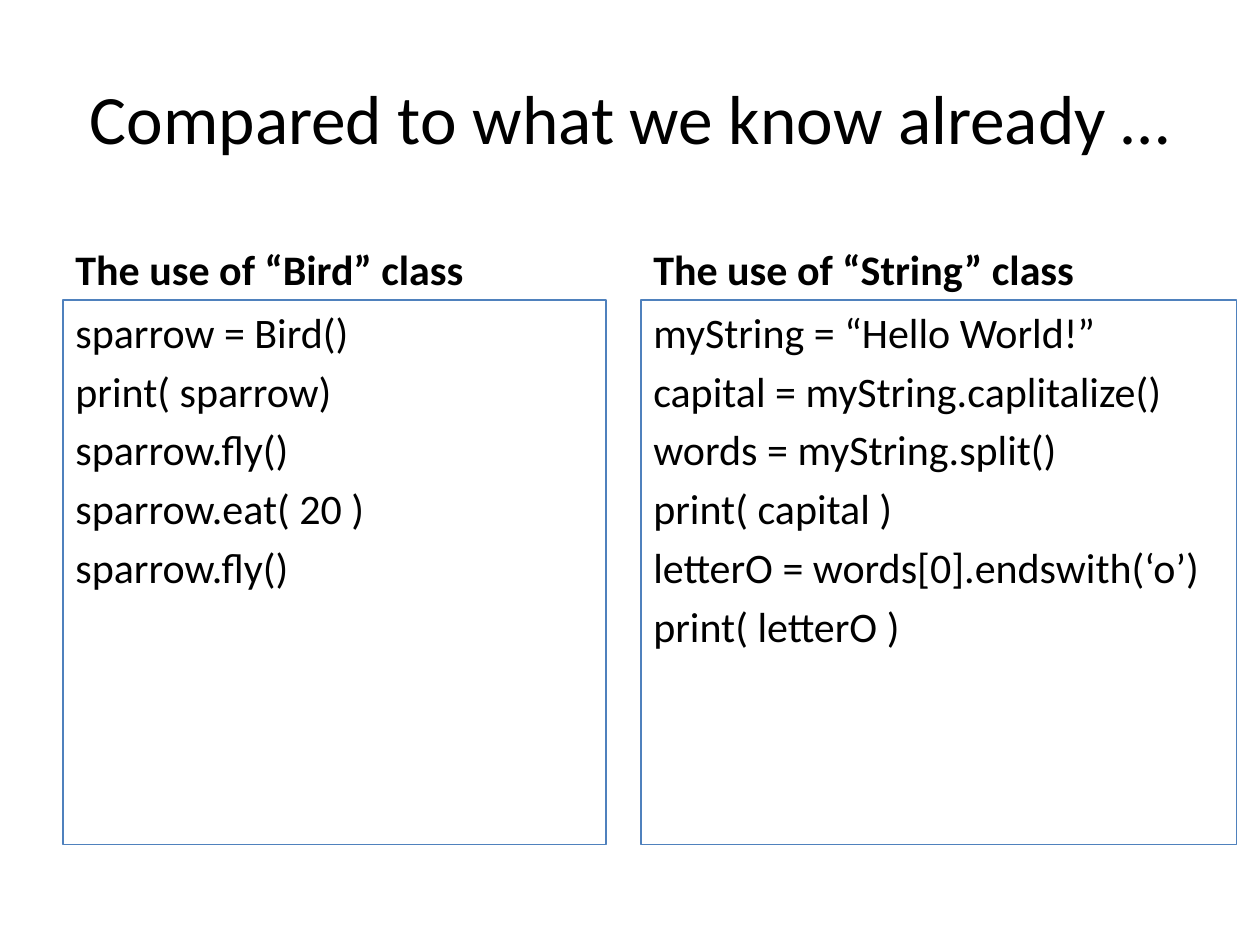
"""Build a slide comparing the use of a Bird class with the String class."""
from dataclasses import dataclass

from pptx import Presentation
from pptx.dml.color import RGBColor
from pptx.enum.text import MSO_ANCHOR as Anchor, MSO_AUTO_SIZE as AutoSize, PP_ALIGN as Align
from pptx.util import Cm, Pt

TITLE = "Compared to what we know already …"
COLUMNS = [
    {
        "heading": "The use of “Bird” class",
        "code": ["sparrow = Bird()", "print( sparrow)", "sparrow.fly()",
                 "sparrow.eat( 20 )", "sparrow.fly()"],
        "left": Cm(1.27),
        "code_width": Cm(10.95),
    },
    {
        "heading": "The use of “String” class",
        "code": ["myString = “Hello World!”", "capital = myString.caplitalize()",
                 "words = myString.split()", "print( capital )",
                 "letterO = words[0].endswith(‘o’)", "print( letterO )"],
        "left": Cm(12.92),
        "code_width": Cm(12.01),
    },
]
HEADING_TOP, HEADING_WIDTH, HEADING_HEIGHT = Cm(4.27), Cm(11.23), Cm(1.78)
CODE_HEIGHT = Cm(10.97)


@dataclass(frozen=True)
class Theme:
    font: str = "Calibri"
    text: RGBColor = RGBColor(0, 0, 0)
    border: RGBColor = RGBColor(0x4F, 0x81, 0xBD)
    border_width: Pt = Pt(0.75)
    title_size: Pt = Pt(39.6)
    body_size: Pt = Pt(24)
    space_before: Pt = Pt(4.8)


THEME = Theme()


def style_font(paragraph, size, bold=False):
    font = paragraph.font
    font.name, font.size, font.bold = THEME.font, size, bold
    font.color.rgb = THEME.text


def add_title(slide):
    title = slide.shapes.title
    title.left, title.top, title.width, title.height = Cm(1.27), Cm(0.76), Cm(22.86), Cm(3.18)
    frame = title.text_frame
    frame.text = TITLE
    frame.auto_size = AutoSize.NONE
    frame.vertical_anchor = Anchor.MIDDLE
    paragraph = frame.paragraphs[0]
    paragraph.alignment = Align.CENTER
    style_font(paragraph, THEME.title_size)


def add_text(slide, lines, box, anchor, bold=False):
    shape = slide.shapes.add_textbox(*box)
    frame = shape.text_frame
    frame.word_wrap = True
    frame.auto_size = AutoSize.NONE
    frame.vertical_anchor = anchor
    frame.text = "\n".join(lines)
    for paragraph in frame.paragraphs:
        paragraph.space_before = THEME.space_before
        style_font(paragraph, THEME.body_size, bold)
    return shape


def add_column(slide, column):
    left = column["left"]
    heading_box = (left, HEADING_TOP, HEADING_WIDTH, HEADING_HEIGHT)
    add_text(slide, [column["heading"]], heading_box, Anchor.BOTTOM, bold=True)
    code_box = (left, HEADING_TOP + HEADING_HEIGHT, column["code_width"], CODE_HEIGHT)
    code = add_text(slide, column["code"], code_box, Anchor.TOP)
    code.line.color.rgb = THEME.border
    code.line.width = THEME.border_width


def main():
    presentation = Presentation()
    presentation.slide_width, presentation.slide_height = Cm(25.4), Cm(19.05)
    slide = presentation.slides.add_slide(presentation.slide_layouts[5])
    add_title(slide)
    for column in COLUMNS:
        add_column(slide, column)
    presentation.save("out.pptx")


if __name__ == "__main__":
    main()
